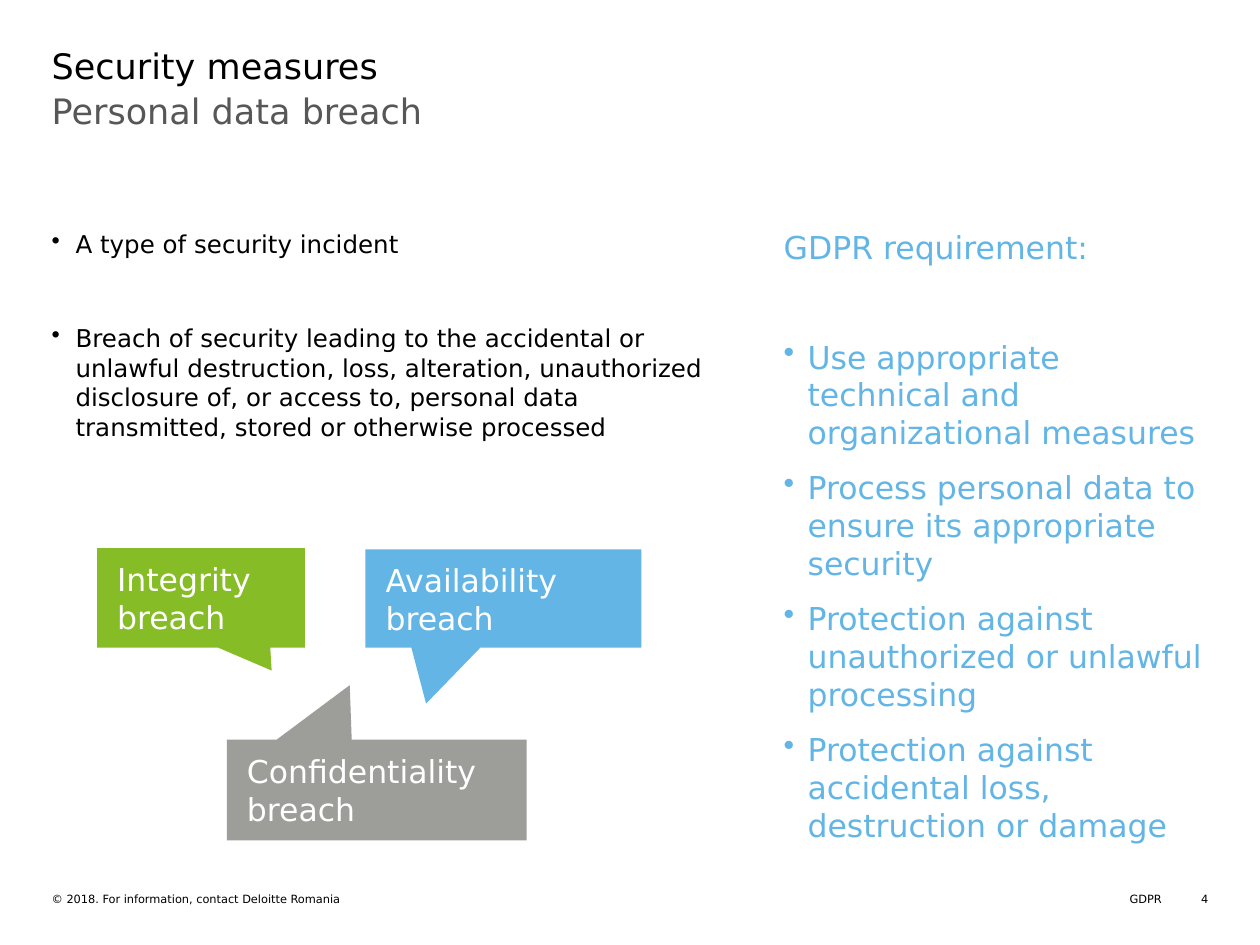
import pptx
import pptx.dml.color
import pptx.enum.shapes
import pptx.enum.text
import pptx.oxml
import pptx.oxml.ns
import pptx.util
from pptx.util import Inches

FONT = "DejaVu Sans"
COLOURS = {
    "black": "000000",
    "subtitle": "575757",
    "blue": "62B5E5",
    "green": "86BC25",
    "grey": "9D9D99",
    "white": "FFFFFF",
}
LEFT = pptx.enum.text.PP_ALIGN.LEFT
RIGHT = pptx.enum.text.PP_ALIGN.RIGHT


def colour(name):
    return pptx.dml.color.RGBColor.from_string(COLOURS[name])


def add_bullet(para, indent=Inches(0.19)):
    properties = para._p.get_or_add_pPr()
    properties.set("marL", str(indent))
    properties.set("indent", str(-indent))
    bullet = pptx.oxml.parse_xml(
        f'<a:buChar {pptx.oxml.ns.nsdecls("a")} char="•"/>')
    properties.append(bullet)


def write(para, text, size=18, ink="black", align=LEFT, bullet=False, after=0):
    if bullet:
        add_bullet(para)
    para.alignment = align
    para.space_before = pptx.util.Pt(0)
    para.space_after = pptx.util.Pt(after)
    span = para.add_run()
    span.text = text
    span.font.name = FONT
    span.font.size = pptx.util.Pt(size)
    span.font.color.rgb = colour(ink)


def set_frame(frame, margin=0):
    frame.word_wrap = True
    frame.margin_left = frame.margin_right = Inches(margin)
    frame.margin_top = frame.margin_bottom = Inches(margin)


def add_text(page, box, paragraphs, **style):
    """Add a text box; each paragraph is a text and its own format."""
    frame = page.shapes.add_textbox(*map(Inches, box)).text_frame
    set_frame(frame)
    for index, (text, own) in enumerate(paragraphs):
        para = frame.add_paragraph() if index else frame.paragraphs[0]
        write(para, text, **{**style, **own})


def add_heading(page, left, top, width):
    add_text(page, (left, top, width, 0.37),
             [("Security measures", {})], size=20)
    add_text(page, (left, top + 0.36, width, 0.83),
             [("Personal data breach", {})], size=20, ink="subtitle")


def add_definition(page, box):
    add_text(page, box, [
        ("A type of security incident", {"after": 37}),
        ("Breach of security leading to the accidental or unlawful "
         "destruction, loss, alteration, unauthorized disclosure of, or "
         "access to, personal data transmitted, stored or otherwise "
         "processed", {}),
    ], size=14, bullet=True, after=10)


def add_requirements(page, box):
    requirements = [
        "Use appropriate technical and organizational measures",
        "Process personal data to ensure its appropriate security",
        "Protection against unauthorized or unlawful processing",
        "Protection against accidental loss, destruction or damage",
    ]
    heading = ("GDPR requirement:", {"bullet": False, "after": 41})
    add_text(page, box, [heading] + [(text, {}) for text in requirements],
             ink="blue", bullet=True, after=10)


def add_callout(page, box, text, fill, tip):
    """Add a callout; tip is its offset from the centre, in box sizes."""
    callout = page.shapes.add_shape(
        pptx.enum.shapes.MSO_SHAPE.RECTANGULAR_CALLOUT, *map(Inches, box))
    callout.adjustments[0], callout.adjustments[1] = tip
    callout.shadow.inherit = False
    callout.fill.solid()
    callout.fill.fore_color.rgb = colour(fill)
    callout.line.fill.background()
    frame = callout.text_frame
    set_frame(frame, margin=0.16)
    frame.vertical_anchor = pptx.enum.text.MSO_ANCHOR.MIDDLE
    write(frame.paragraphs[0], text, ink="white")


def add_breach_types(page, left, top):
    breaches = [
        ((1.03, 1.52, 2.38, 0.8), "Confidentiality breach", "grey", (-0.09, -1.04)),
        ((0, 0, 1.65, 0.79), "Integrity breach", "green", (0.34, 0.73)),
        ((2.13, 0.01, 2.19, 0.78), "Availability breach", "blue", (-0.28, 1.07)),
    ]
    for (x, y, width, height), text, fill, tip in breaches:
        add_callout(page, (left + x, top + y, width, height), text, fill, tip)


def add_footer(page, left, top, width):
    right = left + width
    add_text(page, (left, top, 4.39, 0.22),
             [("© 2018. For information, contact Deloitte Romania", {})], size=6.5)
    add_text(page, (right - 4.39, top, 4.02, 0.22),
             [("GDPR", {})], size=6.5, align=RIGHT)
    add_text(page, (right - 0.25, top, 0.25, 0.11),
             [("4", {})], size=6.5, align=RIGHT)


def main():
    deck = pptx.Presentation()
    deck.slide_width, deck.slide_height = Inches(10), Inches(7.5)
    page = deck.slides.add_slide(deck.slide_layouts[6])
    margin, width = 0.41, 9.18
    add_heading(page, margin, 0.35, width)
    add_definition(page, (margin, 1.82, 5.34, 5.16))
    add_requirements(page, (6.22, 1.81, 3.37, 5.17))
    add_breach_types(page, 0.77, 4.35)
    add_footer(page, margin, 7.08, width)
    deck.save("out.pptx")


if __name__ == "__main__":
    main()
